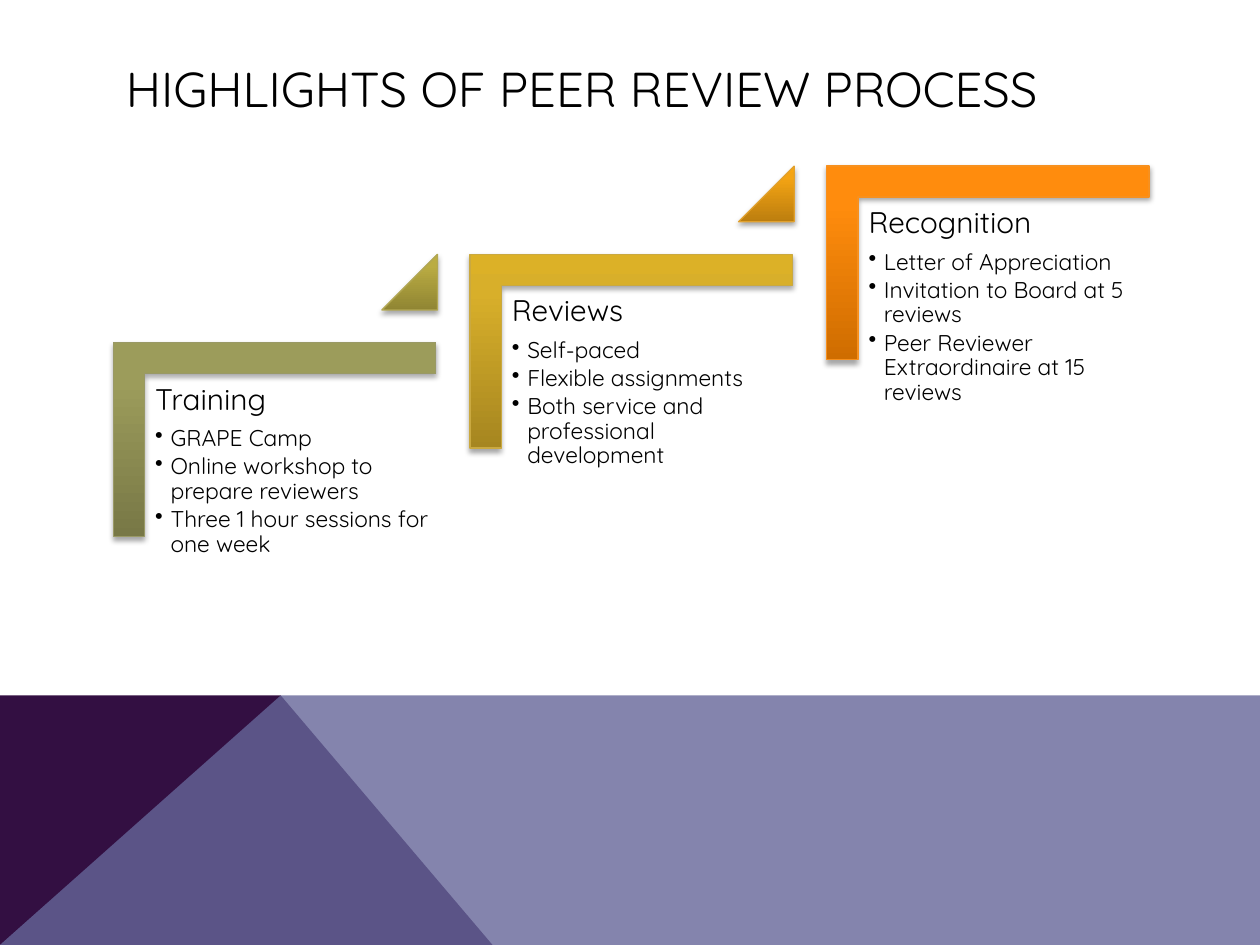
"""Build the slide on the highlights of the peer review process."""
from pptx import Presentation
from pptx.dml.color import RGBColor
from pptx.enum.shapes import MSO_SHAPE as Preset
from pptx.enum.text import MSO_ANCHOR as Anchor
from pptx.oxml import parse_xml
from pptx.oxml.ns import nsdecls, qn
from pptx.util import Cm, Pt

BLACK = RGBColor(0x00, 0x00, 0x00)
WHITE = RGBColor(0xFF, 0xFF, 0xFF)
PLUM = RGBColor(0x33, 0x0F, 0x42)
LAVENDER = RGBColor(0x66, 0x66, 0x99)
OLIVE = RGBColor(0x99, 0x99, 0x66)
OLIVE_SHADES = (RGBColor(0x78, 0x78, 0x46), RGBColor(0x9C, 0x9C, 0x5B), RGBColor(0x9E, 0x9E, 0x5B))
MOSS = RGBColor(0xB2, 0xA7, 0x52)
MOSS_SHADES = (RGBColor(0x90, 0x85, 0x33), RGBColor(0xBA, 0xAC, 0x42), RGBColor(0xBE, 0xAF, 0x40))
GOLD = RGBColor(0xCA, 0xA9, 0x40)
GOLD_SHADES = (RGBColor(0xA6, 0x86, 0x20), RGBColor(0xD8, 0xAF, 0x2A), RGBColor(0xDC, 0xB1, 0x27))
AMBER = RGBColor(0xE1, 0xA1, 0x2E)
AMBER_SHADES = (RGBColor(0xBC, 0x7E, 0x0F), RGBColor(0xF4, 0xA4, 0x13), RGBColor(0xF9, 0xA6, 0x0F))
ORANGE = RGBColor(0xF7, 0x90, 0x1E)
ORANGE_SHADES = (RGBColor(0xCF, 0x6D, 0x00), RGBColor(0xFF, 0x8C, 0x0D), RGBColor(0xFF, 0x8D, 0x0F))

WIDTH, HEIGHT = 25.4, 19.05
BAND_TOP, PEAK = 14.02, 5.66
STEP_RIGHT, STEP_UP = 7.19, 1.78

STEPS = [
    ("Training", OLIVE, OLIVE_SHADES,
     ["GRAPE Camp", "Online workshop to prepare reviewers", "Three 1 hour sessions for one week"]),
    ("Reviews", GOLD, GOLD_SHADES,
     ["Self-paced", "Flexible assignments", "Both service and professional development"]),
    ("Recognition", ORANGE, ORANGE_SHADES,
     ["Letter of Appreciation", "Invitation to Board at 5 reviews",
      "Peer Reviewer Extraordinaire at 15 reviews"]),
]
RISERS = [(MOSS, MOSS_SHADES), (AMBER, AMBER_SHADES)]


class SlideBuilder:
    """Hold the text style and the current page, and draw each kind of element."""

    def __init__(self, page, font="Quicksand", color=BLACK):
        self.page, self.font, self.color = page, font, color

    def polygon(self, points, color, opacity=100):
        """Draw a flat closed outline."""
        corners = [(Cm(x), Cm(y)) for x, y in points]
        builder = self.page.shapes.build_freeform(*corners[0])
        builder.add_line_segments(corners[1:], close=True)
        shape = builder.convert_to_shape()
        shape.shadow.inherit = False
        shape.fill.solid()
        shape.fill.fore_color.rgb = color
        shape.line.fill.background()
        if opacity < 100:
            tint = shape.element.spPr.find(".//" + qn("a:srgbClr"))
            tint.append(parse_xml(f'<a:alpha {nsdecls("a")} val="{opacity * 1000}"/>'))

    def shaded(self, preset, left, top, width, height, adjustments, edge, shades, rotation=0):
        """Draw a preset with an upright gradient and a soft shadow."""
        shape = self.page.shapes.add_shape(preset, Cm(left), Cm(top), Cm(width), Cm(height))
        shape.rotation = rotation
        for index, value in enumerate(adjustments):
            shape.adjustments[index] = value
        stops = "".join(f'<a:gs pos="{place * 1000}"><a:srgbClr val="{shade}"/></a:gs>'
                        for place, shade in zip((0, 80, 100), shades))
        shape.fill.gradient()
        properties = shape.element.spPr
        properties.replace(properties.find(qn("a:gradFill")), parse_xml(
            f'<a:gradFill {nsdecls("a")} rotWithShape="0"><a:gsLst>{stops}</a:gsLst>'
            '<a:lin ang="16200000" scaled="0"/></a:gradFill>'))
        shape.line.color.rgb = edge
        shape.line.width = Pt(0.75)
        shape.shadow.inherit = False
        properties.find(qn("a:effectLst")).append(parse_xml(
            f'<a:outerShdw {nsdecls("a")} blurRad="{Pt(3.1)}" dist="{Pt(1.8)}" dir="5400000" '
            'rotWithShape="0"><a:srgbClr val="000000"><a:alpha val="35000"/></a:srgbClr>'
            '</a:outerShdw>'))

    def text_box(self, left, top, width, height, inset=None, anchor=Anchor.TOP):
        """Add an empty wrapping box and return its text frame."""
        box = self.page.shapes.add_textbox(Cm(left), Cm(top), Cm(width), Cm(height))
        frame = box.text_frame
        frame.word_wrap = True
        frame.vertical_anchor = anchor
        if inset is not None:
            frame.margin_left = frame.margin_right = Cm(inset)
            frame.margin_top = frame.margin_bottom = Cm(inset)
        return frame

    def add_span(self, para, text, size):
        """Add one run in the shared style."""
        span = para.add_run()
        span.text = text
        span.font.name, span.font.size = self.font, Pt(size)
        span.font.color.rgb = self.color

    def title(self, text):
        """Add the page title."""
        frame = self.text_box(2.29, 1.02, 20.88, 1.52, anchor=Anchor.MIDDLE)
        self.add_span(frame.paragraphs[0], text, 28)

    def bulleted(self, frame, heading, items):
        """Add a heading followed by bullets."""
        para = frame.paragraphs[0]
        para.line_spacing, para.space_after = 0.9, Pt(6)
        self.add_span(para, heading, 17)
        for item in items:
            para = frame.add_paragraph()
            para.line_spacing, para.space_after = 0.9, Pt(2)
            properties = para._p.get_or_add_pPr()
            properties.set("marL", str(Cm(0.31)))
            properties.set("indent", str(-Cm(0.31)))
            properties.append(parse_xml(f'<a:buChar {nsdecls("a")} char="•"/>'))
            self.add_span(para, item, 13)


def main():
    """Draw the page and save the deck."""
    deck = Presentation()
    deck.slide_width, deck.slide_height = Cm(WIDTH), Cm(HEIGHT)
    page = deck.slides.add_slide(deck.slide_layouts[6])
    page.background.fill.solid()
    page.background.fill.fore_color.rgb = WHITE
    builder = SlideBuilder(page)

    builder.polygon([(0, HEIGHT), (0, BAND_TOP), (PEAK, BAND_TOP), (9.93, HEIGHT)], PLUM)
    builder.polygon([(0, HEIGHT), (PEAK, BAND_TOP), (WIDTH, BAND_TOP), (WIDTH, HEIGHT)],
                    LAVENDER, opacity=80)
    builder.title("HIGHLIGHTS OF PEER REVIEW PROCESS")

    for index, (heading, edge, shades, items) in enumerate(STEPS):
        right, up = index * STEP_RIGHT, index * STEP_UP
        builder.shaded(Preset.CORNER, 3.58 + right, 5.61 - up, 3.91, 6.5, (0.161, 0.161),
                       edge, shades, rotation=90)
        frame = builder.text_box(2.95 + right, 7.57 - up, 5.87, 5.16, inset=0.18)
        builder.bulleted(frame, heading, items)
        if index < len(RISERS):
            builder.shaded(Preset.ISOSCELES_TRIANGLE, 7.7 + right, 5.13 - up, 1.12, 1.12, (1,),
                           *RISERS[index])
    deck.save("out.pptx")


if __name__ == "__main__":
    main()
